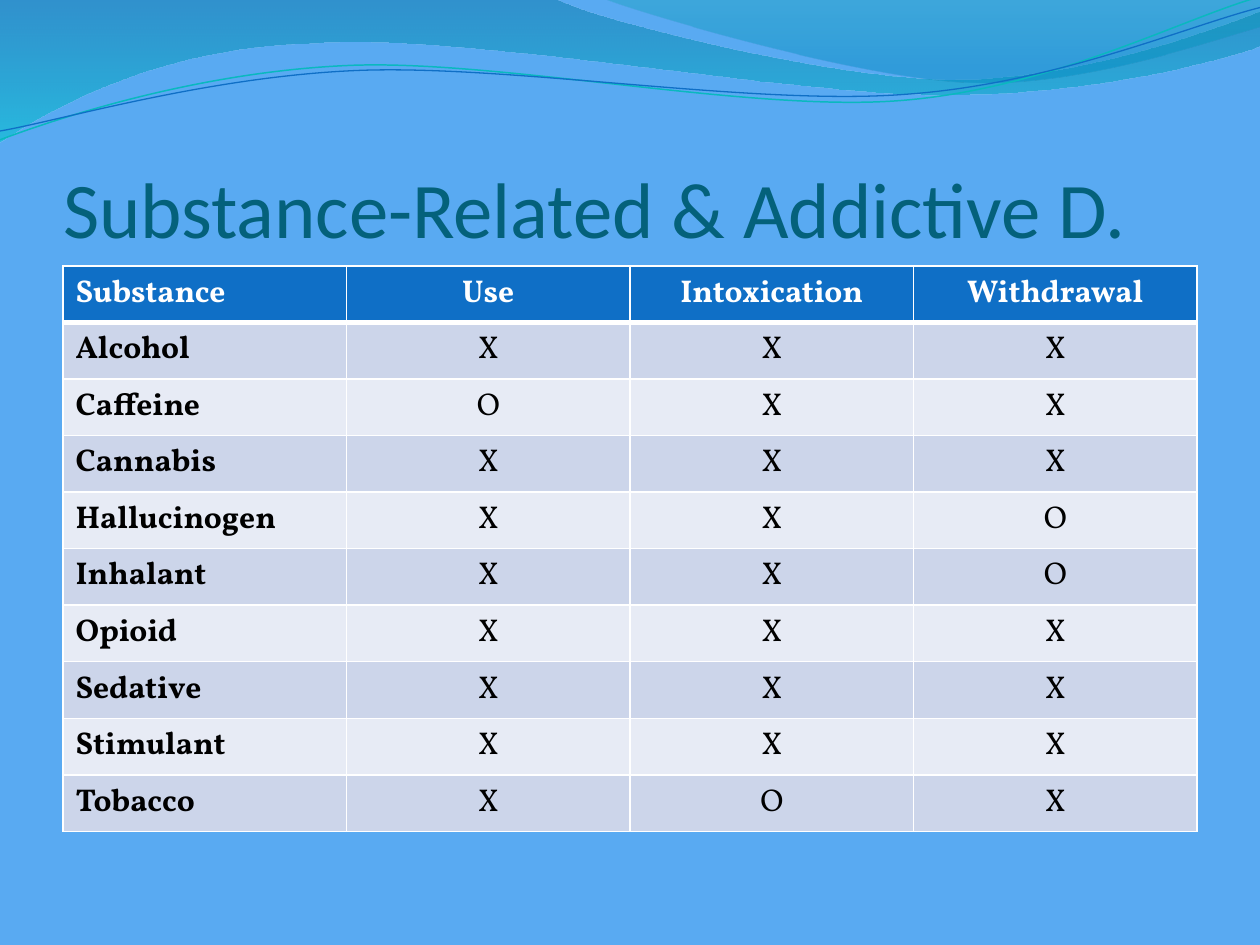
import pptx
import pptx.util
import pptx.dml.color
import pptx.enum.text
import pptx.oxml
import pptx.oxml.ns

Inches, Pt = pptx.util.Inches, pptx.util.Pt
qn = pptx.oxml.ns.qn
ALIGN = pptx.enum.text.PP_ALIGN

TITLE = "Substance-Related & Addictive D."
HEAD = ["Substance", "Use", "Intoxication", "Withdrawal"]
ROWS = [
    ("Alcohol", "XXX"),
    ("Caffeine", "OXX"),
    ("Cannabis", "XXX"),
    ("Hallucinogen", "XXO"),
    ("Inhalant", "XXO"),
    ("Opioid", "XXX"),
    ("Sedative", "XXX"),
    ("Stimulant", "XXX"),
    ("Tobacco", "XOX"),
]
BANDS = ["CCD5EA", "E7EBF5"]
WAVES = [
    {"path": [(0, 0), (4.4, -0.01), (4.76, 0.17, 6.64, 0.63, 7.58, 0.63),
              (8.53, 0.63, 9.58, 0.26, 10, 0.09), (10.01, 0.36),
              (9.83, 0.44, 8.7, 0.76, 7.46, 0.75), (6.22, 0.75, 3.82, 0.28, 2.57, 0.34),
              (1.29, 0.36, 0.46, 0.83, -0.01, 1.13)],
     "stops": [(0, "0074A1", 45), (1, "00C6CF", 55)]},
    {"path": [(4.79, -0.01), (5.09, 0.11, 6.82, 0.62, 7.69, 0.65),
              (8.56, 0.69, 9.61, 0.32, 10, 0.21), (10, 0)],
     "stops": [(0, "00A1A9", 30), (0.8, "008BBF", 45)]},
    {"path": [(0, 1.11), (0.48, 0.93, 1.58, 0.57, 2.77, 0.52),
              (3.95, 0.47, 5.93, 0.89, 7.13, 0.8), (8.33, 0.71, 9.38, 0.15, 9.98, -0.02)],
     "line": ("0AB8BF", 0.85)},
    {"path": [(0, 1.04), (0.47, 0.96, 1.64, 0.61, 2.83, 0.56),
              (4.03, 0.51, 5.97, 0.84, 7.17, 0.75), (8.36, 0.67, 9.41, 0.21, 10, 0.06)],
     "line": ("0F6FC6", 0.75)},
]


def rgb(code):
    """Turn a hex string into a colour."""
    return pptx.dml.color.RGBColor.from_string(code)


def write(frame, text, size=18, font="Vollkorn", color="000000", bold=False, align=ALIGN.LEFT):
    """Put one formatted line of text in a frame."""
    para = frame.paragraphs[0]
    para.alignment = align
    run = para.add_run()
    run.text = text
    run.font.size, run.font.name, run.font.bold = Pt(size), font, bold
    run.font.color.rgb = rgb(color)


def bend(shape, path):
    """Turn the straight segments that have control points into cubic curves."""
    lines = list(shape._element.spPr.iter(qn("a:lnTo")))
    for node, seg in zip(lines, path[1:]):
        if len(seg) == 2:
            continue
        curve = node.makeelement(qn("a:cubicBezTo"), {})
        for x, y in zip(seg[::2], seg[1::2]):
            spot = {"x": str(Inches(x) - shape.left), "y": str(Inches(y) - shape.top)}
            curve.append(node.makeelement(qn("a:pt"), spot))
        node.getparent().replace(node, curve)


def wave(slide, path, stops=None, line=None):
    """Draw a gradient wave or a thin curved line."""
    pts = [(Inches(seg[-2]), Inches(seg[-1])) for seg in path]
    pen = slide.shapes.build_freeform(*pts[0])
    pen.add_line_segments(pts[1:], close=bool(stops))
    shape = pen.convert_to_shape()
    bend(shape, path)
    shape.shadow.inherit = False
    if line:
        shape.fill.background()
        shape.line.color.rgb = rgb(line[0])
        shape.line.width = Pt(line[1])
        return
    shape.line.fill.background()
    shape.fill.gradient()
    shape.fill.gradient_angle = 270
    for stop, (pos, color, _) in zip(shape.fill.gradient_stops, stops):
        stop.position = pos
        stop.color.rgb = rgb(color)
    for node, (_, _, alpha) in zip(shape._element.spPr.iter(qn("a:srgbClr")), stops):
        node.append(node.makeelement(qn("a:alpha"), {"val": str(alpha * 1000)}))


def edge(cell, **widths):
    """Give a cell white borders, with widths in points by side."""
    props = cell._tc.get_or_add_tcPr()
    for i, side in enumerate("LRTB"):
        width = Pt(widths.get(side, 1))
        props.insert(i, pptx.oxml.parse_xml(
            f'<a:ln{side} xmlns:a="http://schemas.openxmlformats.org/drawingml/2006/main" w="{width}">'
            '<a:solidFill><a:srgbClr val="FFFFFF"/></a:solidFill>'
            f'</a:ln{side}>'))


def grid(slide):
    """Build the table of substances."""
    data = [HEAD] + [[name, *marks] for name, marks in ROWS]
    table = slide.shapes.add_table(
        len(data), len(HEAD), Inches(0.5), Inches(2.11), Inches(9), Inches(4.06)).table
    table.horz_banding = False
    for r, row in enumerate(data):
        for c, text in enumerate(row):
            cell = table.cell(r, c)
            cell.fill.solid()
            cell.fill.fore_color.rgb = rgb(BANDS[(r - 1) % 2] if r else "0F6FC6")
            edge(cell, B=1 if r else 3, T=3 if r == 1 else 1)
            write(cell.text_frame, text, bold=r == 0 or c == 0,
                  color="000000" if r else "FFFFFF",
                  align=ALIGN.CENTER if c else ALIGN.LEFT)


def main():
    """Build and save the slide."""
    deck = pptx.Presentation()
    deck.slide_width, deck.slide_height = Inches(10), Inches(7.5)
    slide = deck.slides.add_slide(deck.slide_layouts[5])
    slide.background.fill.solid()
    slide.background.fill.fore_color.rgb = rgb("59AAF2")
    for item in WAVES:
        wave(slide, **item)
    title = slide.shapes.title
    title._element.getparent().append(title._element)
    title.left, title.top, title.width, title.height = map(Inches, (0.5, 0.77, 9, 1.25))
    frame = title.text_frame
    frame.auto_size = pptx.enum.text.MSO_AUTO_SIZE.NONE
    frame.word_wrap = True
    frame.vertical_anchor = pptx.enum.text.MSO_ANCHOR.BOTTOM
    frame.margin_left = frame.margin_right = frame.margin_bottom = 0
    frame.margin_top = Inches(0.05)
    write(frame, TITLE, size=45, font="Calibri", color="04617B")
    grid(slide)
    deck.save("out.pptx")


if __name__ == "__main__":
    main()
